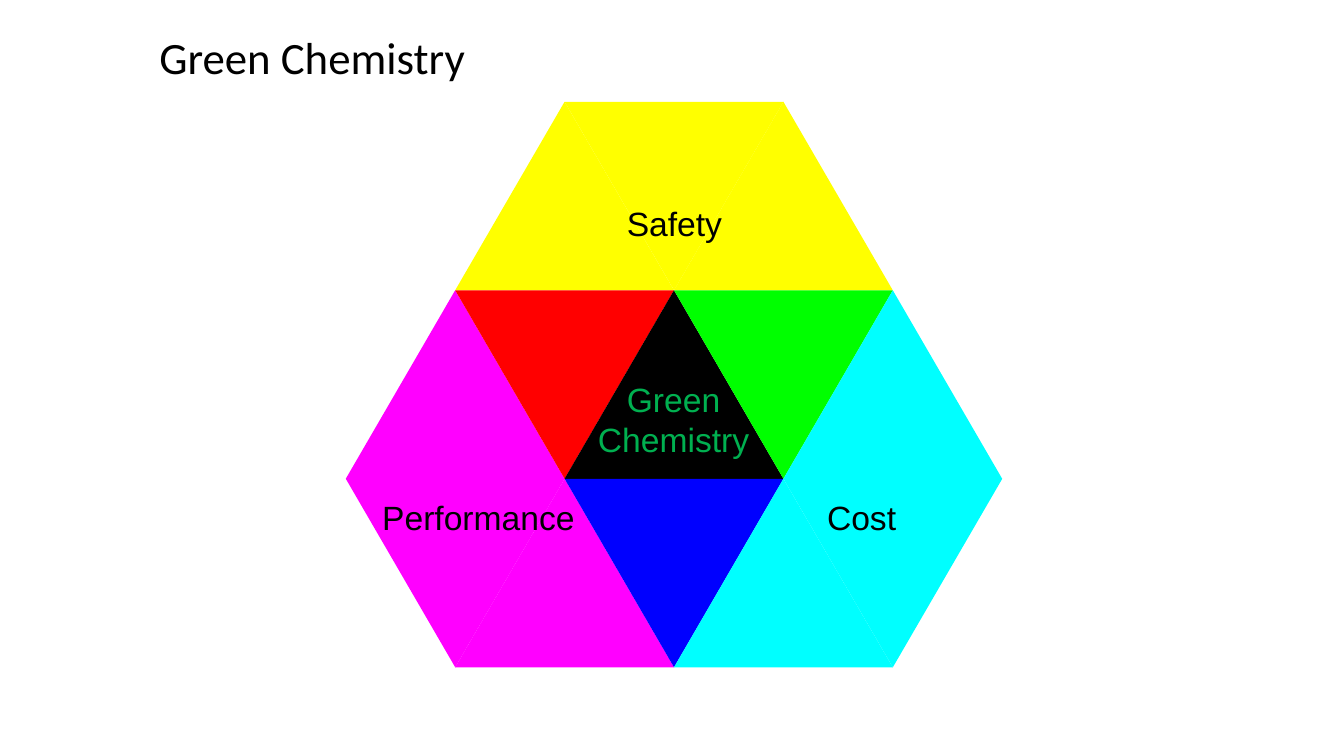
"""Build the Green Chemistry slide: a triangular mosaic of safety, performance and cost."""
from dataclasses import dataclass

from pptx import Presentation
from pptx.dml.color import RGBColor
from pptx.enum.shapes import MSO_SHAPE
from pptx.enum.text import MSO_ANCHOR, MSO_AUTO_SIZE, PP_ALIGN
from pptx.shapes.autoshape import Shape
from pptx.slide import Slide
from pptx.util import Inches, Pt

BLACK = RGBColor(0x00, 0x00, 0x00)
RED = RGBColor(0xFF, 0x00, 0x00)
LIME = RGBColor(0x00, 0xFF, 0x00)
BLUE = RGBColor(0x00, 0x00, 0xFF)
CYAN = RGBColor(0x00, 0xFF, 0xFF)
MAGENTA = RGBColor(0xFF, 0x00, 0xFF)
YELLOW = RGBColor(0xFF, 0xFF, 0x00)
LEAF = RGBColor(0x00, 0xB0, 0x50)

MOSAIC_LEFT, MOSAIC_TOP = 3.43, 1.01
SIDE, ROW_HEIGHT = 2.17, 1.87


@dataclass(frozen=True)
class Tile:
    row: int
    column: int
    color: RGBColor


@dataclass(frozen=True)
class Label:
    lines: tuple[str, ...]
    left: float
    top: float
    width: float
    height: float
    color: RGBColor = BLACK
    font: str = "Arial"
    size: int = 24
    align: PP_ALIGN = PP_ALIGN.CENTER


MOSAIC = (
    (None, YELLOW, YELLOW, YELLOW, None),
    (MAGENTA, RED, BLACK, LIME, CYAN),
    (MAGENTA, MAGENTA, BLUE, CYAN, CYAN),
)
TILES = [
    Tile(row, column, color)
    for row, colors in enumerate(MOSAIC)
    for column, color in enumerate(colors)
    if color is not None
]
HEADING = Label(("Green Chemistry",), 1.48, 0.24, 3.26, 0.64,
                font="Calibri", size=32, align=PP_ALIGN.LEFT)
LABELS = (
    Label(("Green", "Chemistry"), 5.82, 3.71, 1.72, 0.91, color=LEAF),
    Label(("Safety",), 6.11, 1.96, 1.16, 0.5),
    Label(("Performance",), 3.68, 4.88, 2.13, 0.5),
    Label(("Cost",), 8.1, 4.88, 0.89, 0.5),
)


def draw_tile(slide: Slide, tile: Tile) -> None:
    triangle = slide.shapes.add_shape(
        MSO_SHAPE.ISOSCELES_TRIANGLE,
        Inches(MOSAIC_LEFT + tile.column * SIDE / 2),
        Inches(MOSAIC_TOP + tile.row * ROW_HEIGHT),
        Inches(SIDE),
        Inches(ROW_HEIGHT),
    )
    points_up = (tile.row + tile.column) % 2 == 1
    triangle.rotation = 0 if points_up else 180
    triangle.shadow.inherit = False
    triangle.fill.solid()
    triangle.fill.fore_color.rgb = tile.color
    triangle.line.fill.background()


def write_label(box: Shape, label: Label) -> None:
    box.left, box.top = Inches(label.left), Inches(label.top)
    box.width, box.height = Inches(label.width), Inches(label.height)
    frame = box.text_frame
    frame.word_wrap = False
    frame.auto_size = MSO_AUTO_SIZE.SHAPE_TO_FIT_TEXT
    frame.vertical_anchor = MSO_ANCHOR.TOP
    for index, line in enumerate(label.lines):
        paragraph = frame.add_paragraph() if index else frame.paragraphs[0]
        paragraph.alignment = label.align
        run = paragraph.add_run()
        run.text = line
        run.font.name = label.font
        run.font.size = Pt(label.size)
        run.font.color.rgb = label.color


def main() -> None:
    deck = Presentation()
    deck.slide_width, deck.slide_height = Inches(13.33), Inches(7.5)
    slide = deck.slides.add_slide(deck.slide_layouts.get_by_name("Title Only"))
    for tile in TILES:
        draw_tile(slide, tile)
    write_label(slide.shapes.title, HEADING)
    for label in LABELS:
        box = slide.shapes.add_textbox(0, 0, 0, 0)
        write_label(box, label)
    deck.save("out.pptx")


if __name__ == "__main__":
    main()
